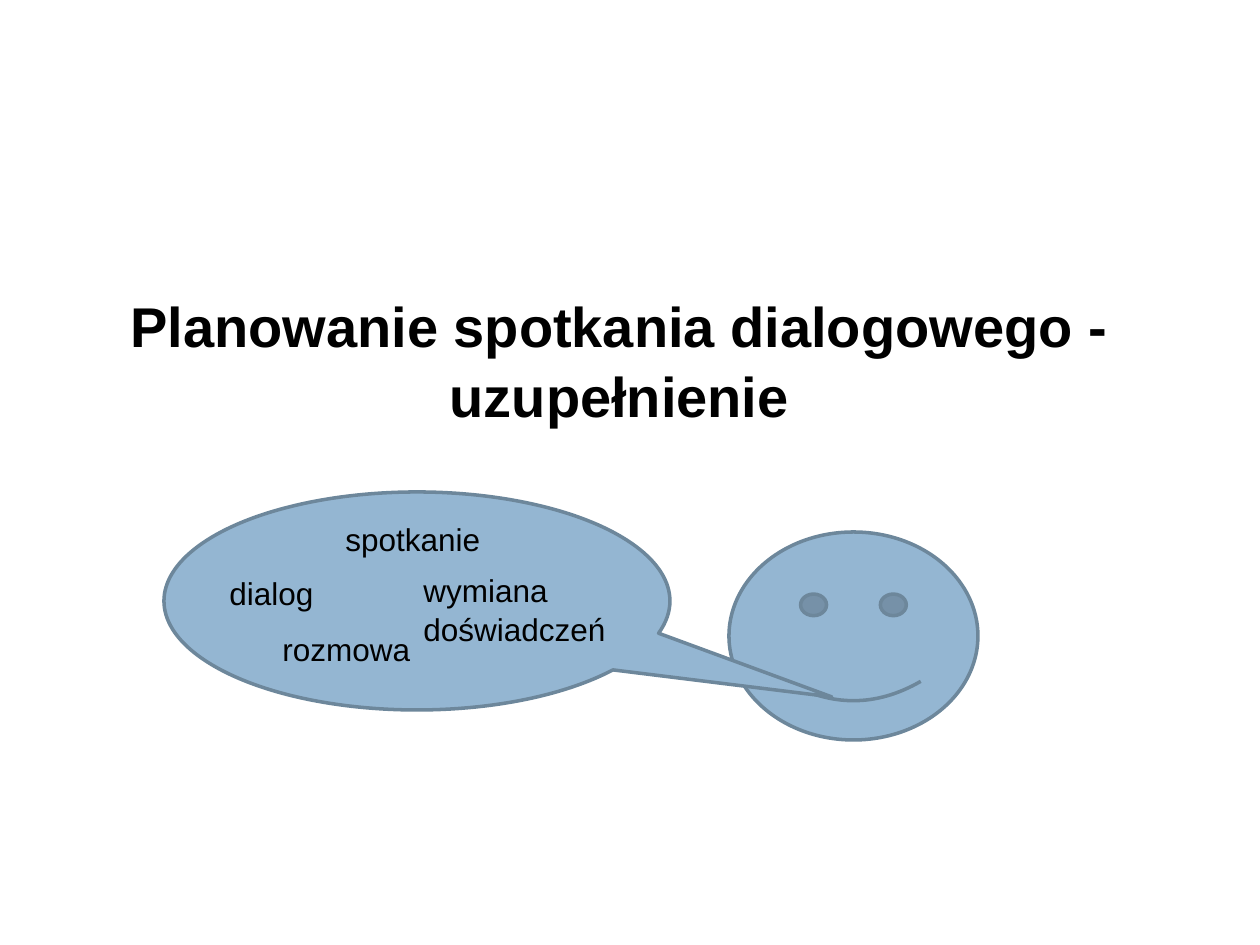
import dataclasses
import pptx
import pptx.dml.color
import pptx.enum.shapes
import pptx.enum.text
import pptx.util

SCALE = 914400 // 126
HUES = {"ink": "000000", "fill": "94B6D2", "edge": "6D879B"}
KINDS = pptx.enum.shapes.MSO_SHAPE
ALIGN = pptx.enum.text.PP_ALIGN
ANCHOR = pptx.enum.text.MSO_ANCHOR


@dataclasses.dataclass(frozen=True)
class Box:
    left: int
    top: int
    width: int
    height: int

    def emu(self) -> list[int]:
        return [n * SCALE for n in dataclasses.astuple(self)]


@dataclasses.dataclass(frozen=True)
class Word:
    text: str
    box: Box


@dataclasses.dataclass(frozen=True)
class Figure:
    kind: KINDS
    box: Box
    bends: tuple[float, ...] = ()


FIGURES = [
    Figure(KINDS.SMILEY_FACE, Box(729, 532, 249, 208)),
    Figure(KINDS.OVAL_CALLOUT, Box(164, 492, 506, 218), (0.82, 0.44)),
]
WORDS = [
    Word("dialog", Box(217, 566, 297, 50)),
    Word("rozmowa", Box(270, 622, 218, 50)),
    Word("spotkanie", Box(333, 512, 194, 50)),
    Word("wymiana doświadczeń", Box(411, 563, 238, 89)),
]


def color(name: str) -> pptx.dml.color.RGBColor:
    return pptx.dml.color.RGBColor.from_string(HUES[name])


def write(slide, text: str, box: Box, *, size: int = 18, bold: bool = False,
          align=ALIGN.LEFT, anchor=ANCHOR.TOP) -> None:
    frame = slide.shapes.add_textbox(*box.emu()).text_frame
    frame.word_wrap = True
    frame.vertical_anchor = anchor
    line = frame.paragraphs[0]
    line.alignment = align
    line.line_spacing = 1.04
    run = line.add_run()
    run.text = text
    run.font.name = "Arial"
    run.font.size = pptx.util.Pt(size)
    run.font.bold = bold
    run.font.color.rgb = color("ink")


def draw(slide, figure: Figure) -> None:
    shape = slide.shapes.add_shape(figure.kind, *figure.box.emu())
    for i, bend in enumerate(figure.bends):
        shape.adjustments[i] = bend
    shape.shadow.inherit = False
    shape.fill.solid()
    shape.fill.fore_color.rgb = color("fill")
    shape.line.color.rgb = color("edge")
    shape.line.width = pptx.util.Pt(2)


def main() -> None:
    deck = pptx.Presentation()
    deck.slide_width = 1260 * SCALE
    deck.slide_height = 945 * SCALE
    slide = deck.slides.add_slide(deck.slide_layouts[6])
    write(slide, "Planowanie spotkania dialogowego - uzupełnienie",
          Box(84, 284, 1071, 149), size=32, bold=True,
          align=ALIGN.CENTER, anchor=ANCHOR.MIDDLE)
    for figure in FIGURES:
        draw(slide, figure)
    for word in WORDS:
        write(slide, word.text, word.box)
    deck.save("out.pptx")


if __name__ == "__main__":
    main()
